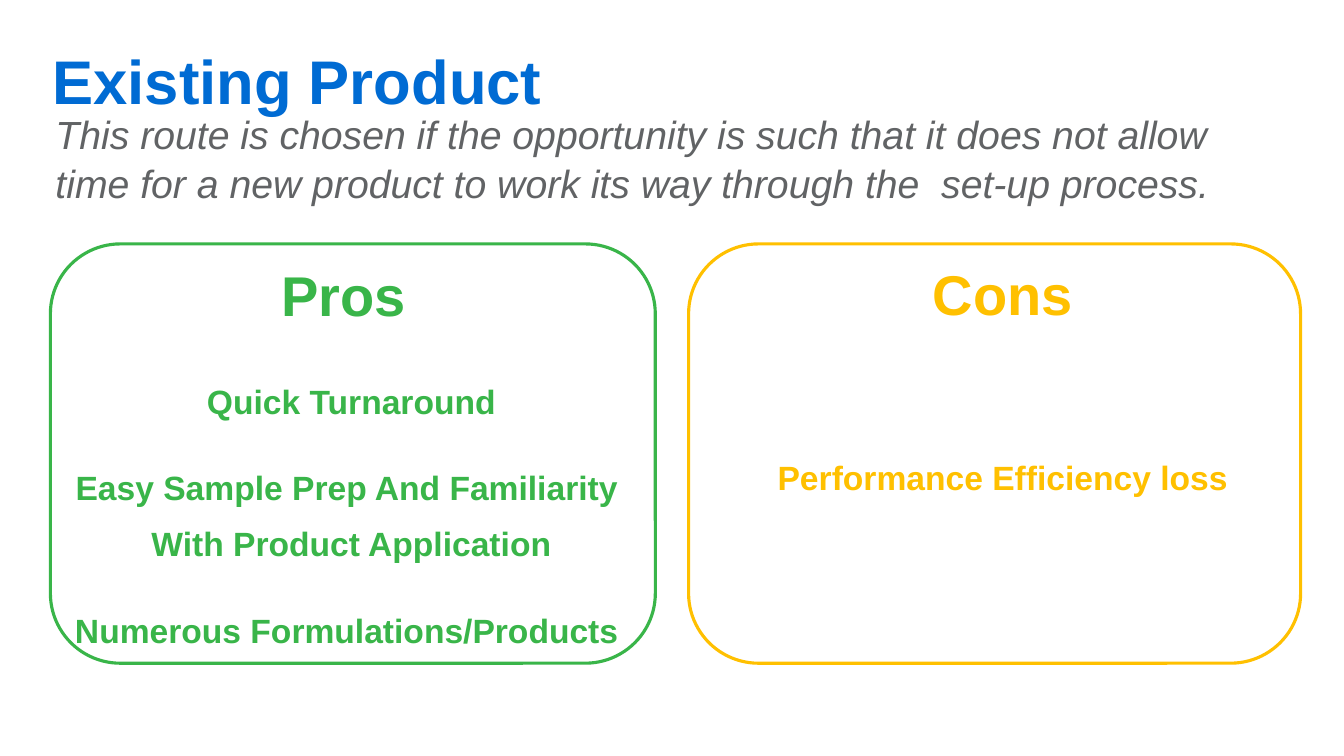
from pptx import Presentation
from pptx.dml.color import RGBColor
from pptx.enum.shapes import MSO_SHAPE
from pptx.enum.text import MSO_ANCHOR, MSO_AUTO_SIZE, PP_ALIGN
from pptx.oxml.ns import qn
from pptx.util import Inches, Pt

BLUE, GRAY, GREEN, GOLD = "006BD3", "616365", "39B549", "FFC000"


def rgb(value):
    return RGBColor.from_string(value)


def write(frame, text, size, color, bold=True, italic=False, before=0,
          align=PP_ALIGN.CENTER, spacing=1.04, first=False):
    paragraph = frame.paragraphs[0] if first else frame.add_paragraph()
    properties = paragraph._p.get_or_add_pPr()
    properties.set("marL", "0")
    properties.set("indent", "0")
    paragraph.alignment = align
    paragraph.line_spacing = spacing
    paragraph.space_before = Pt(before)
    paragraph.space_after = Pt(0)
    properties.append(properties.makeelement(qn("a:buNone"), {}))
    run = paragraph.add_run()
    run.text = text
    run.font.name = "Arial"
    run.font.size = Pt(size)
    run.font.bold = bold
    run.font.italic = italic
    run.font.color.rgb = rgb(color)


presentation = Presentation()
presentation.slide_width = Inches(13.33)
presentation.slide_height = Inches(7.5)
slide = presentation.slides.add_slide(presentation.slide_layouts[4])

# Place the placeholders
areas = {
    0: (0.47, 0.4, 12.37, 0.9),
    1: (0.5, 1.03, 12.32, 0.46),
    2: (0.46, 2.51, 6.05, 4.76),
    4: (7.03, 2.5, 5.83, 4.16),
}
frames = {}
for placeholder in list(slide.placeholders):
    key = placeholder.placeholder_format.idx
    if key not in areas:
        placeholder.element.getparent().remove(placeholder.element)
        continue
    placeholder.left, placeholder.top, placeholder.width, placeholder.height = map(
        Inches, areas[key])
    frame = frames[key] = placeholder.text_frame
    frame.word_wrap = True
    frame.auto_size = MSO_AUTO_SIZE.NONE
    frame.vertical_anchor = MSO_ANCHOR.MIDDLE if key == 0 else MSO_ANCHOR.TOP
    frame.margin_left = frame.margin_right = Inches(0.05)
    frame.margin_top = frame.margin_bottom = Inches(0.05)

# Title and introduction
write(frames[0], "Existing Product", 44, BLUE, align=PP_ALIGN.LEFT,
      spacing=Pt(45), first=True)
write(frames[1], "This route is chosen if the opportunity is such that it does not "
      "allow time for a new product to work its way through the  set-up process.",
      28, GRAY, bold=False, italic=True, align=PP_ALIGN.LEFT, first=True)

# Pros and cons: heading, points with the space above each, and outline
pros = [("Quick Turnaround", 36.5), ("Easy Sample Prep And Familiarity ", 32),
        ("With Product Application", 10), ("Numerous Formulations/Products ", 32)]
cons = [("Performance Efficiency loss", 92)]
panels = [(2, "Pros ", pros, GREEN, 0.5, 6), (4, "Cons", cons, GOLD, 6.83, 6.07)]
for key, heading, points, color, left, width in panels:
    write(frames[key], heading, 40, color, first=True)
    for point, gap in points:
        write(frames[key], point, 24, color, before=gap)
    outline = slide.shapes.add_shape(MSO_SHAPE.ROUNDED_RECTANGLE, Inches(left),
                                     Inches(2.42), Inches(width), Inches(4.16))
    outline.shadow.inherit = False
    outline.fill.background()
    outline.line.color.rgb = rgb(color)
    outline.line.width = Pt(2.25)

presentation.save("out.pptx")
